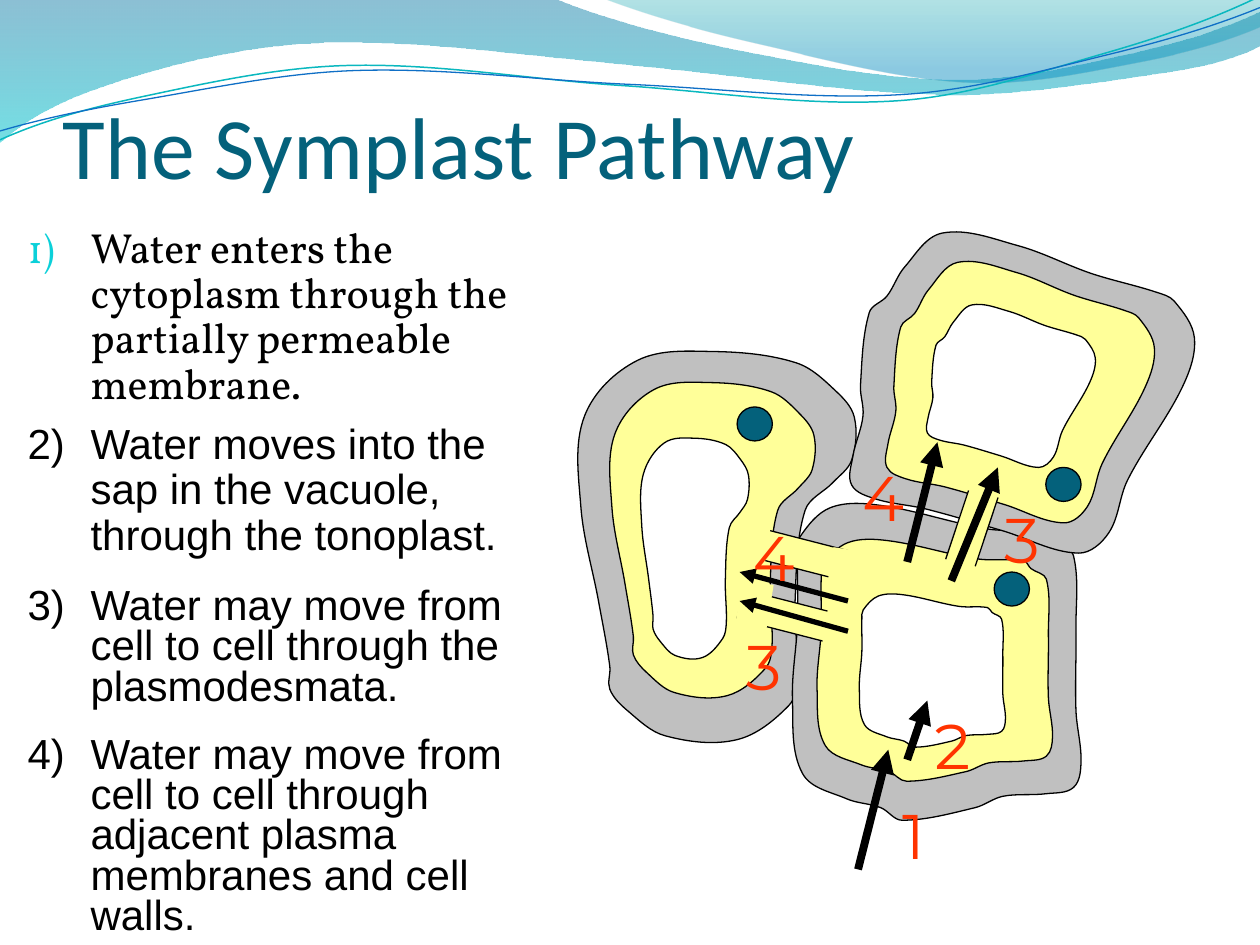
from itertools import chain
from math import dist

from lxml import etree
from pptx import Presentation
from pptx.dml.color import RGBColor
from pptx.enum.shapes import MSO_CONNECTOR, MSO_SHAPE
from pptx.enum.text import MSO_ANCHOR, PP_ALIGN
from pptx.oxml.ns import qn
from pptx.util import Inches, Pt

STRAIGHT = MSO_CONNECTOR.STRAIGHT
OVAL, RECTANGLE = MSO_SHAPE.OVAL, MSO_SHAPE.RECTANGLE
TOP, BOTTOM = MSO_ANCHOR.TOP, MSO_ANCHOR.BOTTOM
LEFT, CENTER = PP_ALIGN.LEFT, PP_ALIGN.CENTER

COLUMNS, ROWS = 10, 7.5
COLORS = {
    "wall": "C0C0C0", "cytoplasm": "FFFF99", "vacuole": "FFFFFF", "nucleus": "04617B",
    "title": "04617B", "ink": "000000", "number": "FF3300", "bullet": "0BD0D9",
    "sea": "0074A1", "aqua": "00C6CF", "teal": "00A1A9", "sky": "008BBF",
    "teal line": "0AB8BF", "blue line": "0F6FC6",
}
WAVES = [
    {"corner": [(0, -0.01)],
     "crest": [(4.4, -0.01), (5.77, 0.38), (7.58, 0.63), (8.99, 0.42), (10, 0.09)],
     "trough": [(10, 0.36), (9.13, 0.59), (7.46, 0.75), (5.02, 0.52), (2.57, 0.34),
                (0.98, 0.63), (0, 1.13)],
     "stops": [(0, "sea", 45), (1, "aqua", 55)]},
    {"corner": [(10, 0)],
     "crest": [(4.79, -0.01), (6.03, 0.35), (7.69, 0.65), (9.03, 0.49), (10, 0.21)],
     "trough": [],
     "stops": [(0, "teal", 30), (0.8, "sky", 45)]},
]
RIPPLES = [
    ("teal line", 0.85, [(0, 1.11), (1.12, 0.77), (2.77, 0.52), (4.94, 0.68), (7.13, 0.8),
                         (8.78, 0.42), (9.98, -0.02)]),
    ("blue line", 0.75, [(0, 1.04), (1.15, 0.79), (2.83, 0.56), (5, 0.67), (7.17, 0.75),
                         (8.81, 0.43), (10, 0.06)]),
]
CELLS = {
    "left": {
        "sides": {
            "left": [(4.84, 5.29), (4.75, 4.77), (4.61, 4.02), (4.64, 3.3)],
            "top": [(5.06, 2.86), (5.66, 2.79), (6.32, 2.88), (6.63, 3.1)],
            "right": [(6.78, 3.31), (6.76, 3.65), (6.61, 3.83), (6.39, 4.05), (6.31, 4.78),
                      (6.33, 5.38)],
            "bottom": [(6.26, 5.6), (5.85, 5.87), (5.28, 5.84), (4.98, 5.64), (4.84, 5.47)]},
        "frames": {"wall": (4.14, 2.67, 2.64, 3.31), "cytoplasm": (4.51, 2.94, 1.95, 2.67),
                   "vacuole": (4.91, 3.41, 1.03, 1.87)},
        "nucleus": (5.85, 3.23)},
    "lower": {
        "sides": {
            "left": [(6.33, 4.41), (6.33, 4.94), (6.29, 5.55), (6.37, 6.14)],
            "bottom": [(6.72, 6.34), (6.99, 6.41), (7.16, 6.51), (7.74, 6.41), (7.96, 6.32),
                       (8.3, 6.3), (8.52, 6.25)],
            "right": [(8.58, 6.05), (8.54, 5.64), (8.54, 5), (8.52, 4.41), (8.37, 4.3)],
            "top": [(8.3, 4.22), (7.85, 4.2), (6.98, 4.01), (6.59, 4.03), (6.35, 4.26)]},
        "frames": {"wall": (6.21, 3.76, 2.39, 2.75), "cytoplasm": (6.42, 4.1, 1.95, 2.1),
                   "vacuole": (6.78, 4.6, 1.21, 1.33)},
        "nucleus": (7.89, 4.54)},
    "upper": {
        "sides": {
            "top": [(9.18, 2.32), (8.66, 2.17), (8.08, 1.95), (7.48, 1.85), (7.18, 2.12)],
            "left": [(7.04, 2.35), (6.9, 2.48), (6.83, 3.06), (6.85, 3.3), (6.77, 3.62),
                     (6.76, 3.85)],
            "bottom": [(6.95, 3.96), (7.35, 4.04), (7.95, 4.21), (8.56, 4.39), (8.8, 4.23)],
            "right": [(8.95, 3.81), (9.39, 3.06), (9.48, 2.68), (9.32, 2.39)]},
        "frames": {"wall": (6.76, 1.81, 3, 2.58), "cytoplasm": (7.04, 2.05, 2.34, 2.1),
                   "vacuole": (7.36, 2.4, 1.47, 1.31)},
        "nucleus": (8.3, 3.71)},
}
STEPS = [
    ("2)\tWater moves into the sap in the vacuole, through the tonoplast.", 3.31, 1.3, 0.9),
    ("3)\tWater may move from cell to cell through the plasmodesmata.", 4.62, 1.18, 0.8),
    ("4)\tWater may move from cell to cell through adjacent plasma membranes and cell walls.",
     5.8, 1.69, 0.8),
]
CHANNELS = [
    ((7.6, 3.78), 18.4, [(7.36, 4.46), (7.6, 3.67)], 13.5),
    ((6.3, 4.02), 104.4, [(5.77, 4.22), (6.51, 4.44)], 279.3),
    ((6.14, 4.5), 104.4, [(5.79, 4.7), (6.48, 4.85)], 279.3),
]
FLOWS = [
    ("1", (6.81, 6.9), (7.05, 5.95), (7.08, 6.27), 4.5),
    ("2", (7.2, 6.03), (7.36, 5.56), (7.39, 5.56), 4.5),
    ("3", (7.55, 4.61), (7.92, 3.71), (7.94, 3.92), 4.5),
    ("4", (7.2, 4.46), (7.44, 3.51), (6.84, 3.59), 4.5),
    ("3", (6.73, 5.01), (5.87, 4.77), (5.89, 4.93), 3),
    ("4", (6.73, 4.77), (5.87, 4.54), (5.97, 4.07), 3),
]


def smooth(points, closed=False):
    """Return start, then two handles and an end for each step of a smooth curve."""
    if len(points) < 3:
        return join(points)
    before, after = points[-1], points[0]
    if not closed:
        before, after = [tuple(3 * a - 3 * b + c for a, b, c in zip(*ends))
                         for ends in (points[:3], points[:-4:-1])]
    padded = [before, *points, after] + ([points[1]] if closed else [])
    curve = [points[0]]
    for previous, start, end, following in zip(padded, padded[1:], padded[2:], padded[3:]):
        reach = dist(start, end) / 3
        leave, arrive = reach / dist(previous, end), reach / dist(start, following)
        curve += [tuple(s + (e - p) * leave for p, s, e in zip(previous, start, end)),
                  tuple(e - (f - s) * arrive for s, e, f in zip(start, end, following)), end]
    return curve


def join(points):
    """Link points by straight steps in the same form as smooth."""
    return points[:1] + [spot for a, b in zip(points, points[1:]) for spot in (a, b, b)]


def refit(points, source, target):
    """Carry points from one frame (left, top, width, height) to another."""
    return [tuple(target[i] + (point[i] - source[i]) * target[i + 2] / source[i + 2]
                  for i in (0, 1)) for point in points]


class Painter:
    """Hold the style and the current page, and draw on its grid."""

    def __init__(self, deck):
        """Open a blank page and measure its grid."""
        self.page = deck.slides.add_slide(deck.slide_layouts[6])
        self.units = (deck.slide_width / COLUMNS, deck.slide_height / ROWS)

    def place(self, *lengths):
        """Turn alternating columns and rows into slide lengths."""
        return [round(length * self.units[i % 2]) for i, length in enumerate(lengths)]

    def color(self, name):
        """Look up a named colour."""
        return RGBColor.from_string(COLORS[name])

    def paint(self, shape, fill=None, line=None, weight=0.75):
        """Set fill and line, and drop the shadow."""
        shape.shadow.inherit = False
        for part, name in ((shape.fill, fill), (shape.line.fill, line)):
            if name:
                part.solid()
                part.fore_color.rgb = self.color(name)
            else:
                part.background()
        if line:
            shape.line.width = Pt(weight)
        return shape

    def curve(self, points, fill=None, line=None, weight=0.75, close=True):
        """Draw a chain of cubic curves."""
        spots = [tuple(self.place(*point)) for point in points]
        builder = self.page.shapes.build_freeform(*spots[0])
        builder.add_line_segments(spots[1:], close=close)
        shape = builder.convert_to_shape()
        legs = list(shape._element.iter(qn("a:lnTo")))
        for first, second, third in zip(legs[::3], legs[1::3], legs[2::3]):
            first.tag = qn("a:cubicBezTo")
            first.extend([second[0], third[0]])
            for leg in (second, third):
                leg.getparent().remove(leg)
        return self.paint(shape, fill, line, weight)

    def wave(self, corner, crest, trough, stops):
        """Draw a band with a see-through gradient from top to bottom."""
        outline = smooth(corner)
        for edge in filter(None, (crest, trough)):
            outline += join([outline[-1], edge[0]])[1:] + smooth(edge)[1:]
        shape = self.curve(outline)
        shape.fill.gradient()
        shape.fill.gradient_angle = 270
        for stop, (position, name, _) in zip(shape.fill.gradient_stops, stops):
            stop.position = position
            stop.color.rgb = self.color(name)
        for tint, (_, _, opacity) in zip(shape._element.iter(qn("a:srgbClr")), stops):
            etree.SubElement(tint, qn("a:alpha"), val=str(opacity * 1000))

    def cell(self, sides, frames, nucleus):
        """Draw one outline at three sizes, then the nucleus."""
        outline = smooth(list(chain.from_iterable(sides.values())), closed=True)
        for layer, frame in frames.items():
            self.curve(refit(outline, frames["wall"], frame), layer, "ink")
        self.preset(OVAL, (*nucleus, 0.28, 0.27), "nucleus", "ink")

    def preset(self, kind, box, fill, line, turn=0):
        """Draw a preset shape."""
        shape = self.page.shapes.add_shape(kind, *self.place(*box))
        shape.rotation = turn
        self.paint(shape, fill, line)

    def arrow(self, start, end, weight):
        """Draw a straight arrow."""
        arrow = self.page.shapes.add_connector(STRAIGHT, *self.place(*start, *end))
        arrow.line.color.rgb = self.color("ink")
        arrow.line.width = Pt(weight)
        etree.SubElement(arrow.line._get_or_add_ln(), qn("a:tailEnd"), type="triangle")
        etree.SubElement(arrow._element.spPr, qn("a:effectLst"))

    def words(self, text, box, font, size, color, align=LEFT, anchor=TOP, inset=0):
        """Write one paragraph in a text box."""
        frame = self.page.shapes.add_textbox(*self.place(*box)).text_frame
        frame.word_wrap, frame.vertical_anchor = True, anchor
        frame.margin_left = frame.margin_right = Inches(inset)
        para = frame.paragraphs[0]
        para.alignment = align
        span = para.add_run()
        span.text = text
        span.font.name, span.font.size = font, Pt(size)
        span.font.color.rgb = self.color(color)
        return frame

    def step(self, text, top, height, spacing, font="Arial", numbered=False):
        """Write one step with a hanging indent."""
        frame = self.words(text, (0.12, top, 4.42, height), font, 24, "ink", inset=0.1)
        para = frame.paragraphs[0]
        para.line_spacing, para.space_before = spacing, Pt(4.8)
        layout = para._p.get_or_add_pPr()
        layout.set("marL", str(Inches(0.5)))
        layout.set("indent", str(-Inches(0.5)))
        if numbered:
            tint = etree.SubElement(layout, qn("a:buClr"))
            etree.SubElement(tint, qn("a:srgbClr"), val=COLORS["bullet"])
            etree.SubElement(layout, qn("a:buSzPct"), val="95000")
            etree.SubElement(layout, qn("a:buAutoNum"), type="arabicParenR")


def main():
    """Build the slide and save it."""
    deck = Presentation()
    deck.slide_width, deck.slide_height = Inches(10), Inches(7.5)
    painter = Painter(deck)
    for wave in WAVES:
        painter.wave(**wave)
    for color, weight, points in RIPPLES:
        painter.curve(smooth(points), None, color, weight, close=False)
    title = painter.words("The Symplast Pathway", (0.5, 0.31, 9, 1.25), "Calibri", 50,
                          "title", anchor=BOTTOM)
    title.margin_bottom = 0
    painter.step("Water enters the cytoplasm through the partially permeable membrane.",
                 1.75, 1.61, 0.9, "Vollkorn", numbered=True)
    for cell in CELLS.values():
        painter.cell(**cell)
    for step in STEPS:
        painter.step(*step)
    for corner, turn, ends, end_turn in CHANNELS:
        painter.preset(RECTANGLE, (*corner, 0.24, 0.79), "cytoplasm", "ink", turn)
        for end in ends:
            painter.preset(RECTANGLE, (*end, 0.39, 0.24), "cytoplasm", "cytoplasm", end_turn)
    for number, start, end, corner, weight in FLOWS:
        painter.arrow(start, end, weight)
        painter.words(number, (*corner, 0.34, 0.47), "Montserrat", 36, "number", CENTER)
    deck.save("out.pptx")


if __name__ == "__main__":
    main()
